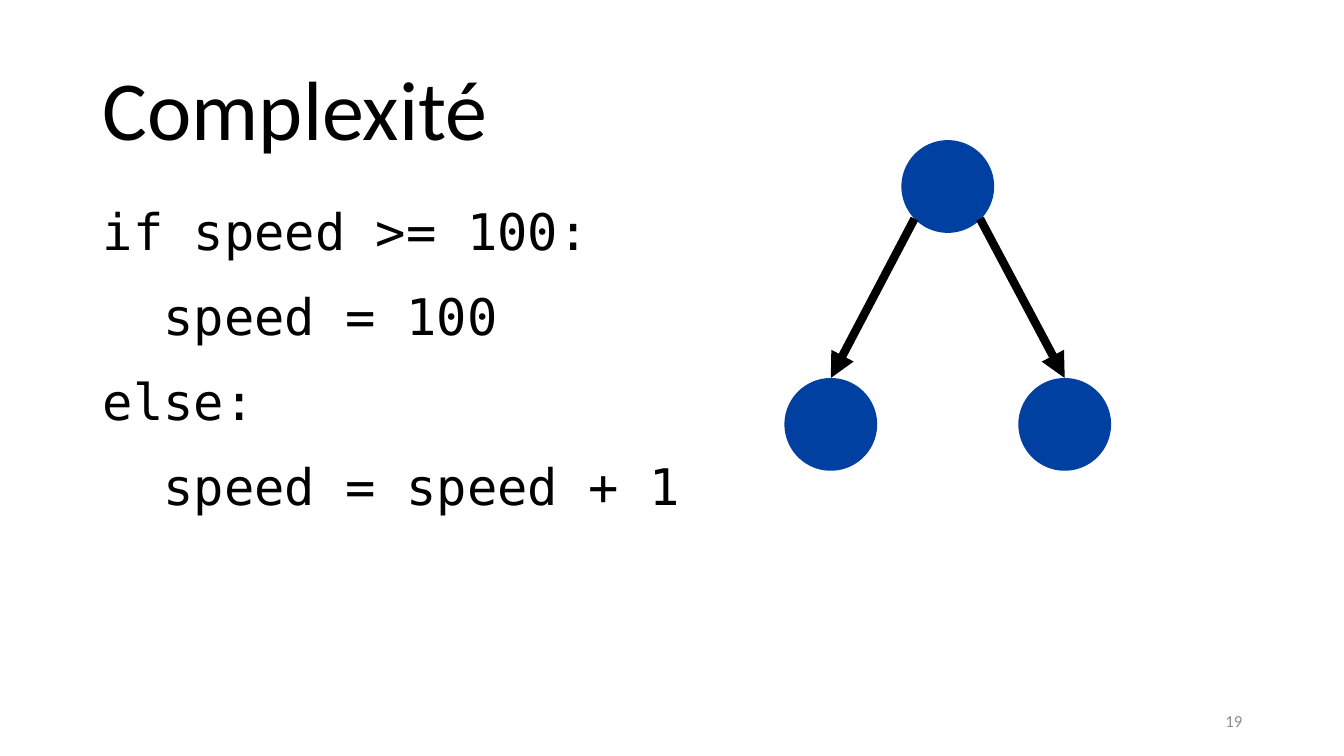
"""Build the slide that shows an if/else statement beside its decision tree."""
from pptx import Presentation
from pptx import util as u
from pptx.dml.color import RGBColor
from pptx.enum import shapes, text
from pptx.oxml.ns import qn
from lxml import etree

PX = 9144
COLORS = {"ink": "000000", "node": "0040A0", "number": "8C8C8C"}
CODE = ["if speed >= 100:", "  speed = 100", "else:", "  speed = speed + 1"]
NODE_SIZE = 92
ROOT = (894, 139)
LEAVES = [(778, 375), (1010, 375)]
ARROW_STARTS = [(907, 217), (972, 217)]


def place(box, left, top, width, height, anchor):
    box.left, box.top, box.width, box.height = (n * PX for n in (left, top, width, height))
    frame = box.text_frame
    frame.word_wrap = True
    frame.auto_size = text.MSO_AUTO_SIZE.NONE
    frame.vertical_anchor = anchor
    return frame


def style(para, font, size, color, align=text.PP_ALIGN.LEFT):
    para.alignment = align
    para.font.name = font
    para.font.size = u.Pt(size)
    para.font.color.rgb = RGBColor.from_string(COLORS[color])


deck = Presentation()
deck.slide_width, deck.slide_height = 1333 * PX, 750 * PX
page = deck.slides.add_slide(deck.slide_layouts[1])

title = place(page.shapes.title, 92, 40, 1150, 145, text.MSO_ANCHOR.MIDDLE)
title.text = "Complexité"
title.paragraphs[0].line_spacing = 0.9
style(title.paragraphs[0], "Calibri", 60, "ink")

body = place(page.placeholders[1], 92, 200, 1150, 476, text.MSO_ANCHOR.TOP)
body.text = "\n".join(CODE)
for index, para in enumerate(body.paragraphs):
    para.line_spacing = 0.9
    para.space_before = u.Pt(10 if index else 0)
    para.space_after = u.Pt(12)
    properties = para._p.get_or_add_pPr()
    properties.set("marL", "0")
    properties.set("indent", "0")
    etree.SubElement(properties, qn("a:buNone"))
    style(para, "DejaVu Sans Mono", 36, "ink")

number = place(page.shapes.add_textbox(0, 0, 0, 0), 942, 695, 300, 40, text.MSO_ANCHOR.MIDDLE)
number.text = "19"
style(number.paragraphs[0], "Calibri", 12, "number", text.PP_ALIGN.RIGHT)

tree = page.shapes.add_group_shape().shapes
for left, top in [ROOT, *LEAVES]:
    node = tree.add_shape(
        shapes.MSO_SHAPE.OVAL, left * PX, top * PX, NODE_SIZE * PX, NODE_SIZE * PX)
    node.shadow.inherit = False
    node.fill.solid()
    node.fill.fore_color.rgb = RGBColor.from_string(COLORS["node"])
    node.line.fill.background()

for (start_x, start_y), (left, top) in zip(ARROW_STARTS, LEAVES):
    arrow = tree.add_connector(
        shapes.MSO_CONNECTOR.STRAIGHT,
        start_x * PX, start_y * PX, (left + NODE_SIZE // 2) * PX, top * PX)
    arrow.line.width = u.Pt(6)
    arrow.line.color.rgb = RGBColor.from_string(COLORS["ink"])
    etree.SubElement(arrow.line._get_or_add_ln(), qn("a:tailEnd"), type="triangle")
    etree.SubElement(arrow._element.spPr, qn("a:effectLst"))

deck.save("out.pptx")
